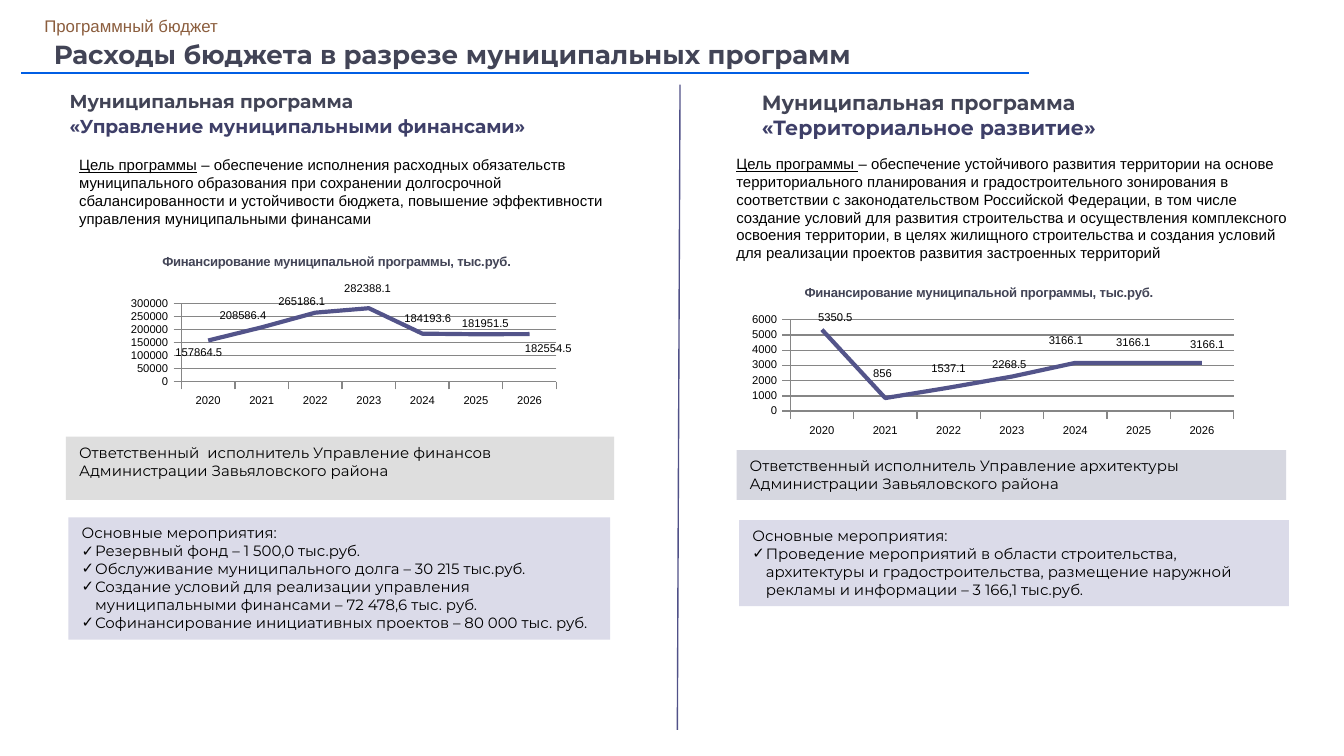
"""Build a slide comparing two municipal budget programmes."""
from lxml.etree import SubElement
from pptx import Presentation
from pptx.chart.data import CategoryChartData
from pptx.dml.color import RGBColor
from pptx.enum.chart import XL_CHART_TYPE as ChartType, XL_LABEL_POSITION as LabelPos
from pptx.enum.chart import XL_MARKER_STYLE as Marker, XL_TICK_MARK as Tick
from pptx.enum.shapes import MSO_CONNECTOR as Connector, MSO_SHAPE as Shape
from pptx.enum.text import MSO_ANCHOR as Anchor, MSO_AUTO_SIZE as AutoSize, PP_ALIGN as Align
from pptx.oxml import parse_xml
from pptx.oxml.ns import nsdecls, qn
from pptx.util import Pt

PX = 9144
BLACK = RGBColor(0x00, 0x00, 0x00)
WHITE = RGBColor(0xFF, 0xFF, 0xFF)
DARK = RGBColor(0x42, 0x44, 0x56)
INDIGO = RGBColor(0x3E, 0x3F, 0x68)
BROWN = RGBColor(0x8B, 0x5D, 0x3D)
BLUE = RGBColor(0x00, 0x5E, 0xE4)
DIVIDER = RGBColor(0x50, 0x51, 0x88)
SERIES = RGBColor(0x53, 0x54, 0x8A)
AXIS = RGBColor(0x86, 0x86, 0x86)
GREY = RGBColor(0xDE, 0xDE, 0xDE)
MIST = RGBColor(0xD6, 0xD7, 0xE0)
LAVENDER = RGBColor(0xDB, 0xDB, 0xE9)
YEARS = [str(year) for year in range(2020, 2027)]
CHART_TITLE = "Финансирование муниципальной программы, тыс.руб."
PROGRAMME = "Муниципальная программа"
ACTIVITIES = "Основные мероприятия:"

PROGRAMMES = [
    {
        "heading": (42, 62, 463, 47), "heading_size": 10, "heading_gap": 1.5,
        "name": "«Управление муниципальными финансами»",
        "goal_box": (49, 111, 420, 64),
        "goal": ("Цель программы", " – обеспечение исполнения расходных обязательств муниципального "
                 "образования при сохранении долгосрочной сбалансированности и устойчивости бюджета, "
                 "повышение эффективности управления муниципальными финансами"),
        "chart": (82, 175, 350, 132), "title_at": (37, 12), "plot": (53, 51, 279, 58),
        "scale": (300000, 50000),
        "values": [157864.5, 208586.4, 265186.1, 282388.1, 184193.6, 181951.5, 182554.5],
        "shifts": [(-7, 18), (-14, 0), (-10, 1), (-1, -6), (4, -2), (7, 1), (14, 20)],
        "owner_box": (49, 325, 408, 47), "owner_fill": GREY,
        "owner": "Ответственный  исполнитель Управление финансов Администрации Завьяловского района",
        "list_box": (51, 385, 403, 91),
        "items": ["Резервный фонд – 1 500,0 тыс.руб.",
                  "Обслуживание муниципального долга – 30 215 тыс.руб.",
                  "Создание условий для реализации управления муниципальными финансами – 72 478,6 тыс. руб.",
                  "Софинансирование инициативных проектов – 80 000 тыс. руб."],
    },
    {
        "heading": (557, 62, 417, 47), "heading_size": 11, "heading_gap": 0,
        "name": "«Территориальное развитие»",
        "goal_box": (538, 110, 435, 91),
        "goal": ("Цель программы ", "– обеспечение устойчивого развития территории на основе "
                 "территориального планирования и градостроительного зонирования в соответствии с "
                 "законодательством Российской Федерации, в том числе создание условий для развития "
                 "строительства и осуществления комплексного освоения территории, в целях жилищного "
                 "строительства и создания условий для реализации проектов развития застроенных территорий"),
        "chart": (551, 200, 374, 128), "title_at": (46, 10), "plot": (37, 38, 330, 68),
        "scale": (6000, 1000),
        "values": [5350.5, 856, 1537.1, 2268.5, 3166.1, 3166.1, 3166.1],
        "shifts": [(10, 0), (-2, -9), (0, -5), (-2, 0), (-7, -8), (-4, -6), (4, -5)],
        "owner_box": (548, 335, 409, 37), "owner_fill": MIST,
        "owner": "Ответственный исполнитель Управление архитектуры Администрации Завьяловского района",
        "list_box": (550, 387, 409, 64),
        "items": ["Проведение мероприятий в области строительства, архитектуры и градостроительства, "
                  "размещение наружной рекламы и информации – 3 166,1 тыс.руб."],
    },
]


def px(*lengths):
    """Turn px lengths into EMU."""
    return [length * PX for length in lengths]


def apply(target, values):
    """Set every attribute named in a dict."""
    for name, value in values.items():
        setattr(target, name, value)


def set_font(font, size, color=BLACK, name="Arial", **values):
    """Format a font."""
    apply(font, {"size": Pt(size), "name": name, **values})
    font.color.rgb = color


def write(frame, paragraphs, size, **values):
    """Fill a text frame with paragraphs of (text, overrides) spans."""
    apply(frame, {"word_wrap": True, "auto_size": AutoSize.NONE})
    for index, spans in enumerate(paragraphs):
        para = frame.paragraphs[0] if index == 0 else frame.add_paragraph()
        para.alignment = Align.LEFT
        for text, overrides in spans:
            span = para.add_run()
            span.text = text
            set_font(span.font, size, **{**values, **overrides})


def set_insets(frame):
    """Give a text frame narrow margins."""
    left, top = px(7, 4)
    apply(frame, {"margin_left": left, "margin_right": left, "margin_top": top, "margin_bottom": top})


def add_text(page, area, paragraphs, size, **values):
    """Add a text box and return its frame."""
    frame = page.shapes.add_textbox(*px(*area)).text_frame
    write(frame, paragraphs, size, **values)
    return frame


def add_box(page, area, fill):
    """Add a plain filled rectangle."""
    box = page.shapes.add_shape(Shape.RECTANGLE, *px(*area))
    box.shadow.inherit = False
    box.fill.solid()
    box.fill.fore_color.rgb = fill
    box.line.fill.background()
    return box


def add_panel(page, area, fill, lines):
    """Add a filled box of text, with check marks after the first line."""
    frame = add_box(page, area, fill).text_frame
    frame.vertical_anchor = Anchor.TOP
    write(frame, [[(line, {})] for line in lines], 8, name="Montserrat")
    if len(lines) > 1:
        for index, para in enumerate(frame.paragraphs):
            props = para._p.get_or_add_pPr()
            props.set("marL", str(10 * PX))
            props.set("indent", str(-10 * PX))
            if index:
                SubElement(props, qn("a:buFont")).set("typeface", "Arial")
                SubElement(props, qn("a:buChar")).set("char", "✓")


def set_layout(parent, index, values):
    """Give a chart part a manual layout."""
    for old in parent.findall(qn("c:layout")):
        parent.remove(old)
    parts = "".join(f'<c:{name} val="{value}"/>' for name, value in values.items())
    xml = f'<c:layout {nsdecls("c")}><c:manualLayout>{parts}</c:manualLayout></c:layout>'
    parent.insert(index, parse_xml(xml))


def label_points(series, shifts, width, height):
    """Label every point, moved from above it by its shift, without leader lines."""
    for index in range(len(shifts)):
        label = series.points[index].data_label
        set_font(label.font, 6)
        label.position = LabelPos.ABOVE
    labels = series._element.find(qn("c:dLbls"))
    for leader in labels.findall(qn("c:showLeaderLines")):
        leader.set("val", "0")
    for label, (dx, dy) in zip(labels.findall(qn("c:dLbl")), shifts):
        set_layout(label, 1, {"x": dx / width, "y": dy / height})


def add_line_chart(page, programme):
    """Add the funding chart of a programme."""
    area = programme["chart"]
    width, height = area[2:]
    data = CategoryChartData()
    data.categories = YEARS
    data.add_series("Series 1", programme["values"])
    chart = page.shapes.add_chart(ChartType.LINE, *px(*area), data).chart
    chart.has_legend = False
    set_font(chart.font, 6)

    title = chart.chart_title
    span = title.text_frame.paragraphs[0].add_run()
    span.text = CHART_TITLE
    set_font(span.font, 7, DARK, bold=True)
    title.include_in_layout = False
    x, y = programme["title_at"]
    edge = {"xMode": "edge", "yMode": "edge"}
    set_layout(title._element, 1, {**edge, "x": x / width, "y": y / height})

    plot = chart.plots[0]
    plot.vary_by_categories = False
    x, y, w, h = programme["plot"]
    set_layout(plot._element.getparent(), 0, {
        "layoutTarget": "inner", **edge,
        "x": x / width, "y": y / height, "w": w / width, "h": h / height})

    maximum, step = programme["scale"]
    apply(chart.value_axis, {"minimum_scale": 0, "maximum_scale": maximum, "major_unit": step})
    for axis in (chart.category_axis, chart.value_axis):
        axis.major_tick_mark = Tick.OUTSIDE
        axis.format.line.color.rgb = AXIS
        set_font(axis.tick_labels.font, 6)
    chart.value_axis.major_gridlines.format.line.color.rgb = AXIS

    series = plot.series[0]
    series.smooth = False
    series.marker.style = Marker.NONE
    series.format.line.color.rgb = SERIES
    series.format.line.width = Pt(2.25)
    label_points(series, programme["shifts"], width, height)


def add_header(page):
    """Add the section label, the title and the rule under it."""
    title = page.shapes.title
    apply(title, dict(zip(("left", "top", "width", "height"), px(33, 23, 900, 37))))
    frame = title.text_frame
    write(frame, [[("Расходы бюджета в разрезе муниципальных программ", {})]], 14,
          color=DARK, name="Montserrat", bold=True)
    frame.vertical_anchor = Anchor.MIDDLE
    frame.paragraphs[0].line_spacing = 0.9
    set_insets(frame)
    set_insets(add_text(page, (26, 8, 196, 23), [[("Программный бюджет", {})]], 9, color=BROWN))
    rule = add_box(page, (15, 53, 751, 3), BLUE)
    rule.line.color.rgb = WHITE
    rule.line.width = Pt(0.75)


def add_divider(page):
    """Add the line between the two programmes."""
    line = page.shapes.add_connector(Connector.STRAIGHT, *px(506, 63, 504, 543))
    line.line.color.rgb = DIVIDER
    line.line.width = Pt(0.75)
    SubElement(line._element.spPr, qn("a:effectLst"))


def add_programme(page, programme):
    """Add one programme column."""
    heading = add_text(page, programme["heading"],
                       [[(PROGRAMME, {})], [(programme["name"], {"color": INDIGO})]],
                       programme["heading_size"], color=DARK, name="Montserrat", bold=True)
    heading.paragraphs[1].space_before = Pt(programme["heading_gap"])
    lead, goal = programme["goal"]
    add_text(page, programme["goal_box"], [[(lead, {"underline": True}), (goal, {})]], 8)
    add_line_chart(page, programme)
    add_panel(page, programme["owner_box"], programme["owner_fill"], [programme["owner"]])
    add_panel(page, programme["list_box"], LAVENDER, [ACTIVITIES, *programme["items"]])


def main():
    """Build and save the deck."""
    deck = Presentation()
    deck.slide_width = 1000 * PX
    deck.slide_height = deck.slide_width * 9 // 16
    page = deck.slides.add_slide(deck.slide_layouts[5])
    add_header(page)
    for programme in PROGRAMMES:
        add_programme(page, programme)
    add_divider(page)
    deck.save("out.pptx")


if __name__ == "__main__":
    main()
